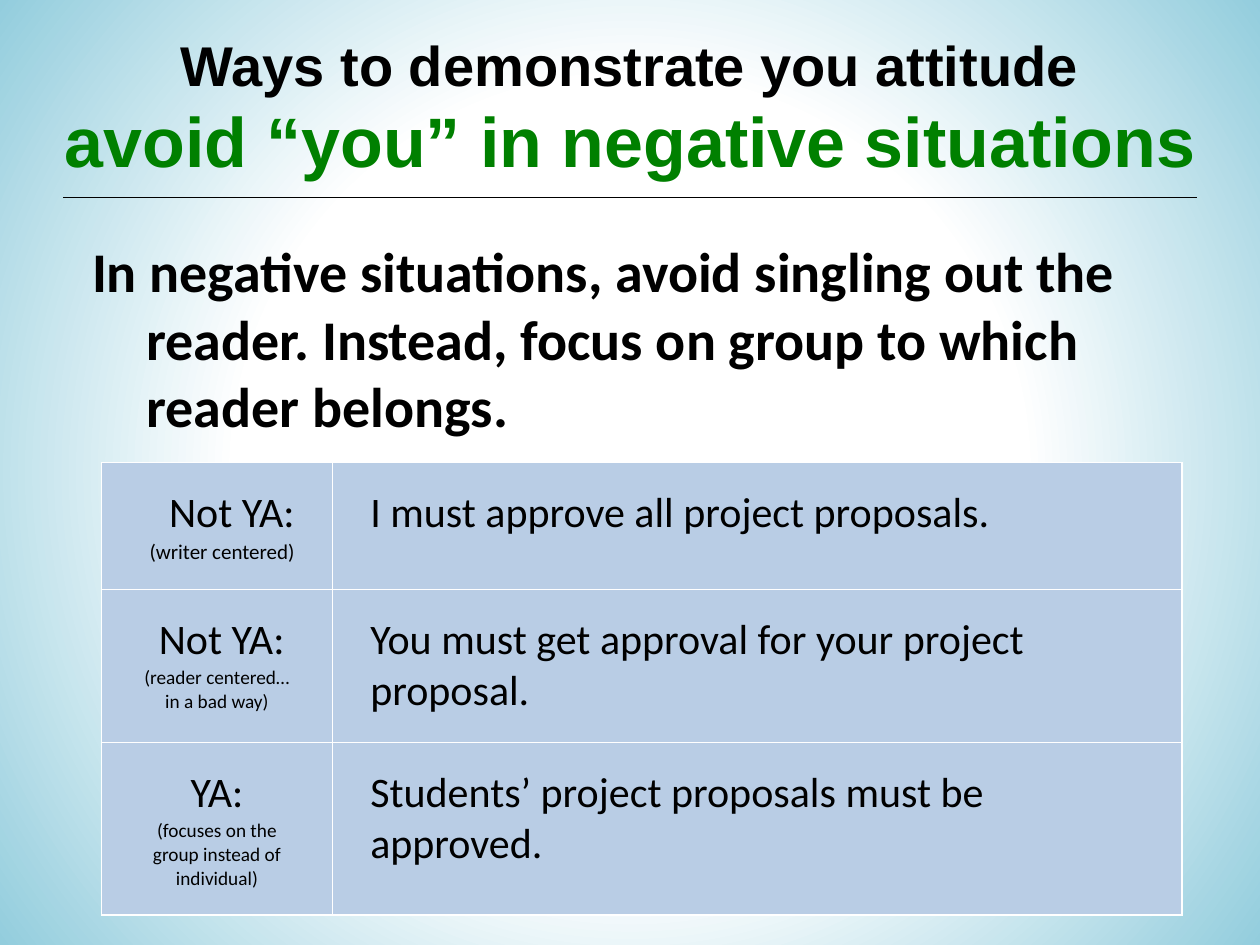
from lxml import etree
from pptx import Presentation
from pptx.dml.color import RGBColor
from pptx.enum.shapes import MSO_CONNECTOR
from pptx.enum.text import MSO_ANCHOR, MSO_AUTO_SIZE, PP_ALIGN
from pptx.oxml import parse_xml
from pptx.oxml.ns import nsdecls, qn
from pptx.util import Pt

BLACK = RGBColor(0x00, 0x00, 0x00)
WHITE = RGBColor(0xFF, 0xFF, 0xFF)
GREEN = RGBColor(0x00, 0x80, 0x00)
AQUA = RGBColor(0x93, 0xCD, 0xDD)
CELL_BLUE = RGBColor(0xB9, 0xCD, 0xE5)
LEFT, CENTER, RIGHT = PP_ALIGN.LEFT, PP_ALIGN.CENTER, PP_ALIGN.RIGHT
TOP, MIDDLE = MSO_ANCHOR.TOP, MSO_ANCHOR.MIDDLE
STRAIGHT = MSO_CONNECTOR.STRAIGHT
NO_AUTOFIT = MSO_AUTO_SIZE.NONE
TITLE_ONLY = 5

# Label, note, note size, label alignment, sentence, sentence anchor, row height
EXAMPLES = [
    ("Not YA:", "(writer centered)", 12, RIGHT,
     "I must approve all project proposals.", TOP, 72.5),
    (" Not YA:", "(reader centered… in a bad way)", 11, CENTER,
     "You must get approval for your project proposal.", MIDDLE, 87.5),
    ("YA:", "(focuses on the group instead of individual)", 11, CENTER,
     "Students’ project proposals must be approved.", TOP, 98.5),
]


def add_run(paragraph, text, size, font="Calibri", color=BLACK, bold=False):
    run = paragraph.add_run()
    run.text = text
    run.font.name = font
    run.font.size = Pt(size)
    run.font.bold = bold
    run.font.color.rgb = color


def paint_background(slide):
    fill = slide.background.fill
    fill.gradient()
    for stop, position, color in zip(fill.gradient_stops, (0.5, 1), (WHITE, AQUA)):
        stop.position = position
        stop.color.rgb = color
    # Turn the linear gradient into a circular one around the centre
    gradient = slide.element.find(".//" + qn("a:gradFill"))
    gradient.remove(gradient.find(qn("a:lin")))
    gradient.append(parse_xml(
        f'<a:path {nsdecls("a")} path="circle">'
        '<a:fillToRect l="50000" t="50000" r="50000" b="50000"/></a:path>'))


def place_title(slide, left, top, width, height):
    title = slide.shapes.title
    title.left, title.top = Pt(left), Pt(top)
    title.width, title.height = Pt(width), Pt(height)
    frame = title.text_frame
    frame.auto_size = NO_AUTOFIT
    frame.vertical_anchor = MIDDLE
    paragraph = frame.paragraphs[0]
    paragraph.alignment = CENTER
    add_run(paragraph, "Ways to demonstrate you attitude", 32, "Arial", bold=True)
    paragraph.add_line_break()
    add_run(paragraph, "avoid “you” in negative situations", 40, "Arial", GREEN, True)


def add_rule(slide, left, top, width):
    rule = slide.shapes.add_connector(
        STRAIGHT, Pt(left), Pt(top), Pt(left + width), Pt(top))
    rule.line.color.rgb = BLACK
    rule.line.width = Pt(0.75)
    etree.SubElement(rule.element.spPr, qn("a:effectLst"))


def add_advice(slide, left, top, width, height):
    box = slide.shapes.add_textbox(Pt(left), Pt(top), Pt(width), Pt(height))
    box.text_frame.word_wrap = True
    paragraph = box.text_frame.paragraphs[0]
    paragraph.space_before = Pt(6.4)
    # Hanging indent
    properties = paragraph._p.get_or_add_pPr()
    properties.set("marL", str(Pt(40.5)))
    properties.set("indent", str(-Pt(31)))
    add_run(paragraph, "In negative situations, avoid singling out the reader. "
            "Instead, focus on group to which reader belongs.", 32, bold=True)


def format_cell(cell, anchor):
    cell.fill.solid()
    cell.fill.fore_color.rgb = CELL_BLUE
    cell.margin_left = cell.margin_right = Pt(21.6)
    cell.margin_top = cell.margin_bottom = Pt(14.4)
    cell.vertical_anchor = anchor
    properties = cell._tc.get_or_add_tcPr()
    for index, side in enumerate(("lnL", "lnR", "lnT", "lnB")):
        properties.insert(index, parse_xml(
            f'<a:{side} {nsdecls("a")} w="{Pt(1)}"><a:solidFill>'
            f'<a:srgbClr val="{WHITE}"/></a:solidFill></a:{side}>'))


def add_examples(slide, left, top, width, label_width):
    height = sum(example[-1] for example in EXAMPLES)
    table = slide.shapes.add_table(
        len(EXAMPLES), 2, Pt(left), Pt(top), Pt(width), Pt(height)).table
    table.first_row = table.horz_banding = False
    table.columns[0].width = Pt(label_width)
    table.columns[1].width = Pt(width - label_width)
    for row, example in zip(table.rows, EXAMPLES):
        label, note, note_size, alignment, sentence, anchor, row_height = example
        row.height = Pt(row_height)
        label_cell, sentence_cell = row.cells
        format_cell(label_cell, TOP)
        format_cell(sentence_cell, anchor)
        label_paragraph = label_cell.text_frame.paragraphs[0]
        note_paragraph = label_cell.text_frame.add_paragraph()
        label_paragraph.alignment = note_paragraph.alignment = alignment
        add_run(label_paragraph, label, 24)
        add_run(note_paragraph, note, note_size)
        sentence_paragraph = sentence_cell.text_frame.paragraphs[0]
        sentence_paragraph.alignment = LEFT
        add_run(sentence_paragraph, sentence, 24)


def main():
    presentation = Presentation()
    presentation.slide_width, presentation.slide_height = Pt(720), Pt(540)
    slide = presentation.slides.add_slide(presentation.slide_layouts[TITLE_ONLY])
    paint_background(slide)
    place_title(slide, 0, 5, 720, 111.6)
    add_advice(slide, 36, 131.8, 639.4, 336.2)
    add_rule(slide, 36, 113, 648)
    add_examples(slide, 58, 264.4, 617.4, 132)
    presentation.save("out.pptx")


if __name__ == "__main__":
    main()
